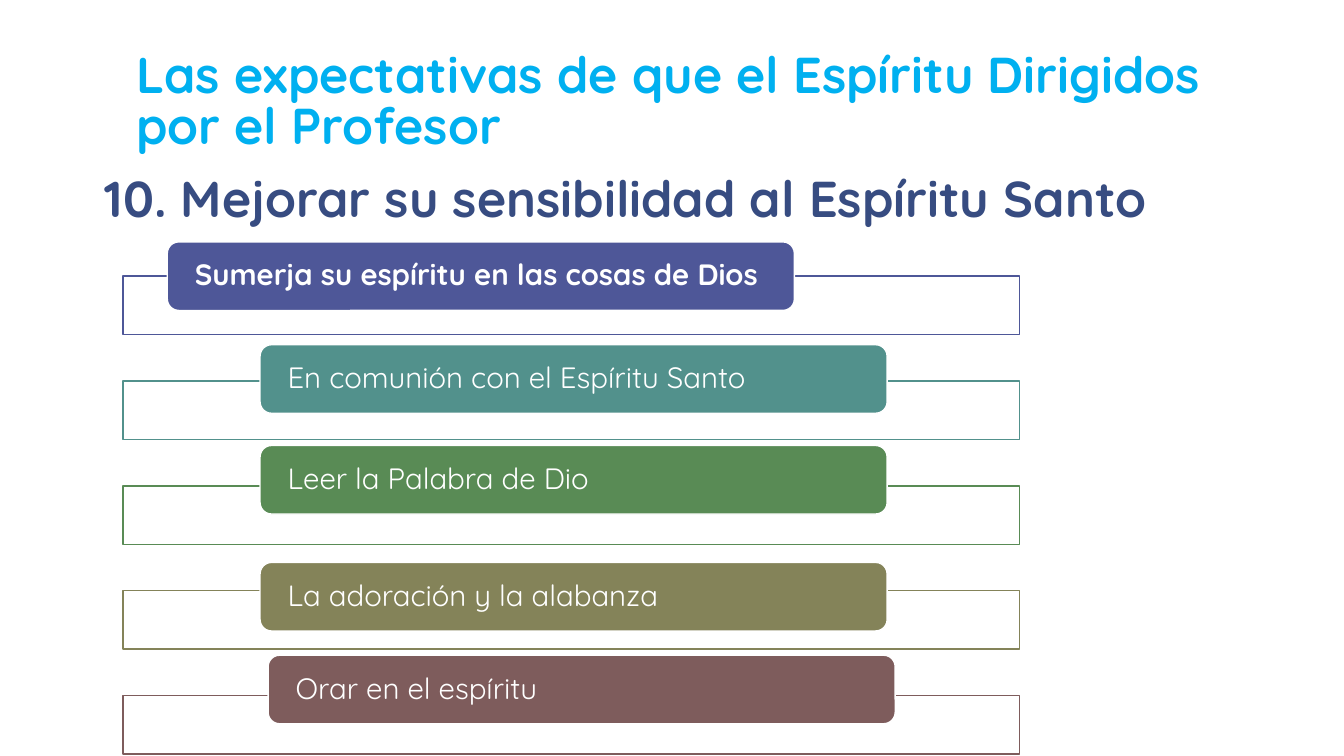
from lxml.etree import SubElement
from pptx import Presentation
from pptx.dml.color import RGBColor
from pptx.enum.shapes import MSO_SHAPE
from pptx.enum.text import MSO_ANCHOR, MSO_AUTO_SIZE, PP_ALIGN
from pptx.oxml.ns import qn
from pptx.util import Inches, Pt

WIDE, HIGH = Inches(13.33), Inches(7.5)
FONT = "Quicksand"
HUES = {
    "white": "FFFFFF",
    "sky": "00B0F0",
    "navy": "374C81",
    "blue": "4E5798",
    "teal": "52918C",
    "green": "598B55",
    "olive": "848359",
    "wine": "7E5C5C",
}
ITEMS = [
    ("Sumerja su espíritu en las cosas de Dios", "blue", 12.45, 32, True),
    ("En comunión con el Espíritu Santo", "teal", 19.35, 45.6, False),
    ("Leer la Palabra de Dio", "green", 19.35, 58.93, False),
    ("La adoración y la alabanza", "olive", 19.35, 74.4, False),
    ("Orar en el espíritu", "wine", 19.95, 86.67, False),
]
FRAME_TOP, FRAME_STEP = 36.53, 13.87


def col(share):
    return int(WIDE * share / 100)


def row(share):
    return int(HIGH * share / 100)


def hue(name):
    return RGBColor.from_string(HUES[name])


def place(shape, left, top, width, height):
    shape.left, shape.top = col(left), row(top)
    shape.width, shape.height = col(width), row(height)


def write(shape, text, size, tint, bold, lead, anchor, side, edge):
    frame = shape.text_frame
    frame.word_wrap = True
    frame.auto_size = MSO_AUTO_SIZE.NONE
    frame.vertical_anchor = anchor
    frame.margin_left = frame.margin_right = col(side)
    frame.margin_top = frame.margin_bottom = row(edge)
    para = frame.paragraphs[0]
    para.alignment = PP_ALIGN.LEFT
    para.line_spacing = lead
    run = para.add_run()
    run.text = text
    run.font.name = FONT
    run.font.size = Pt(size)
    run.font.bold = bold
    run.font.color.rgb = hue(tint)
    return para


def add_box(slide, kind, spot, fill, line):
    box = slide.shapes.add_shape(kind, 0, 0, 0, 0)
    place(box, *spot)
    box.shadow.inherit = False
    box.fill.solid()
    box.fill.fore_color.rgb = hue(fill)
    box.line.color.rgb = hue(line)
    box.line.width = Pt(1)
    return box


def add_frame(slide, top, tint):
    spot = (9.15, top, 66.69, 7.73)
    box = add_box(slide, MSO_SHAPE.RECTANGLE, spot, "white", tint)
    fill = box.element.spPr.find(qn("a:solidFill"))
    SubElement(fill[0], qn("a:alpha"), val="90000")


def add_label(slide, text, tint, left, top, bold):
    spot = (left, top, 46.66, 9.07)
    box = add_box(slide, MSO_SHAPE.ROUNDED_RECTANGLE, spot, tint, "white")
    write(box, text, 21, "white", bold, 0.9, MSO_ANCHOR.MIDDLE, 1.8, 0)


def add_title(slide):
    title = slide.shapes.title
    place(title, 9.15, 1.07, 83.35, 20.4)
    text = "Las expectativas de que el Espíritu Dirigidos por el Profesor"
    write(title, text, 36, "sky", True, 0.85, MSO_ANCHOR.BOTTOM, 0.98, 0.93)


def add_body(slide):
    body = slide.placeholders[1]
    place(body, 6.83, 21.73, 85.97, 10.4)
    text = "10. Mejorar su sensibilidad al Espíritu Santo"
    para = write(body, text, 36, "navy", True, 0.95, MSO_ANCHOR.TOP, 0.98, 0.93)
    para.space_before = Pt(18.7)
    props = para.runs[0].font and para._p.get_or_add_pPr()
    props.set("marL", "0")
    props.set("indent", "0")
    SubElement(props, qn("a:buNone"))


def main():
    deck = Presentation()
    deck.slide_width, deck.slide_height = WIDE, HIGH
    slide = deck.slides.add_slide(deck.slide_layouts[1])
    slide.background.fill.solid()
    slide.background.fill.fore_color.rgb = hue("white")
    add_title(slide)
    add_body(slide)
    for step, (text, tint, left, top, bold) in enumerate(ITEMS):
        add_frame(slide, FRAME_TOP + step * FRAME_STEP, tint)
        add_label(slide, text, tint, left, top, bold)
    deck.save("out.pptx")


if __name__ == "__main__":
    main()
